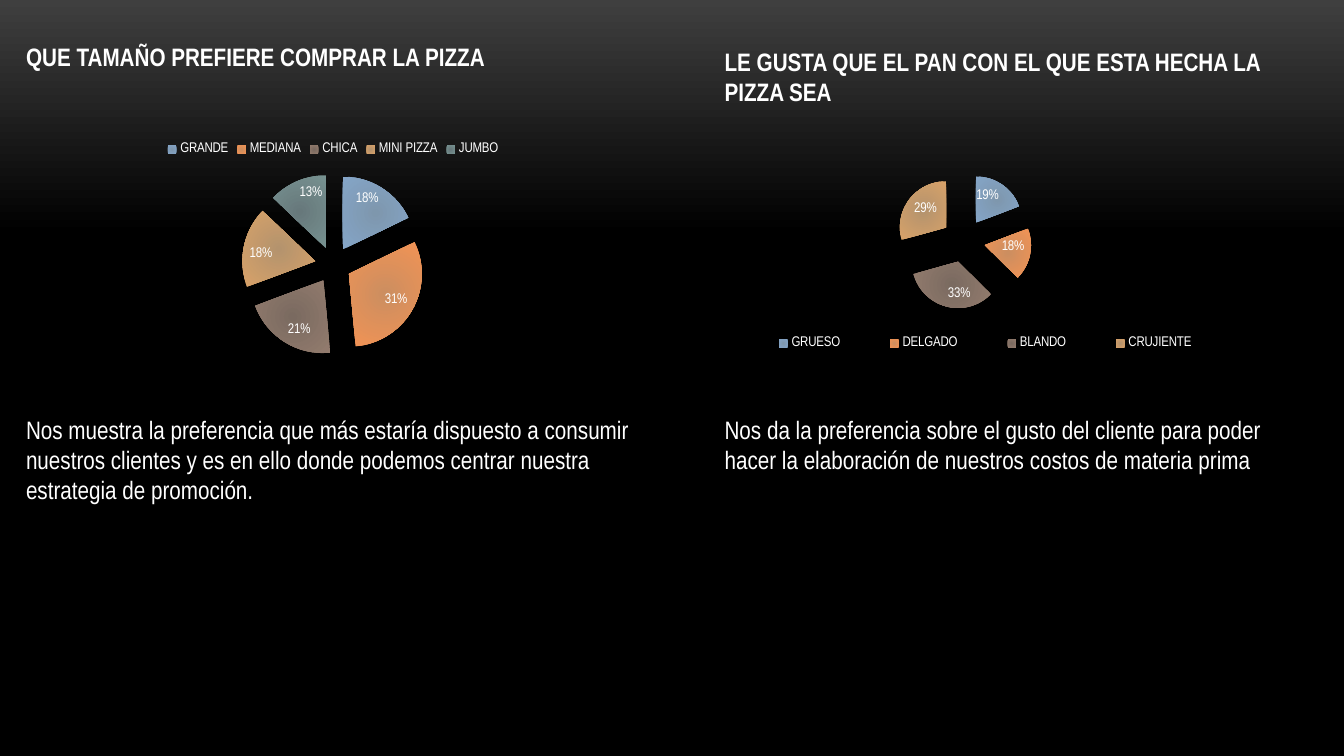
from pptx import Presentation
from pptx.chart.data import CategoryChartData
from pptx.dml.color import RGBColor
from pptx.enum.chart import XL_CHART_TYPE, XL_LABEL_POSITION, XL_LEGEND_POSITION
from pptx.enum.text import MSO_AUTO_SIZE
from pptx.oxml import parse_xml
from pptx.oxml.ns import nsdecls
from pptx.util import Pt

FONT = "Arial Narrow"
WHITE = "FFFFFF"
# Centre and rim colour of each slice
SLICES = [("7E97AD", "84A5C8"), ("CC8E60", "F29355"), ("7A6A60", "937C6E"),
          ("B4936D", "D8A269"), ("67787B", "779291")]


def color(value):
    return RGBColor.from_string(value)


def style_font(font, size, bold=False):
    for name, value in {"name": FONT, "size": Pt(size), "bold": bold}.items():
        setattr(font, name, value)
    font.color.rgb = color(WHITE)


def paint_background(slide):
    fill = slide.background.fill
    fill.gradient()
    fill.gradient_angle = 270
    for stop, (position, value) in zip(fill.gradient_stops,
                                       [(0, "3F3F3F"), (0.31, "000000")]):
        stop.position = position
        stop.color.rgb = color(value)


def add_text(slide, box, text, bold=False):
    frame = slide.shapes.add_textbox(*map(Pt, box)).text_frame
    frame.word_wrap = True
    frame.auto_size = MSO_AUTO_SIZE.SHAPE_TO_FIT_TEXT
    run = frame.paragraphs[0].add_run()
    run.text = text
    style_font(run.font, 18, bold)


def radial_fill(centre, rim):
    return parse_xml(
        f'<a:gradFill {nsdecls("a")} rotWithShape="1"><a:gsLst>'
        f'<a:gs pos="0"><a:srgbClr val="{centre}"/></a:gs>'
        f'<a:gs pos="100000"><a:srgbClr val="{rim}"/></a:gs></a:gsLst>'
        '<a:path path="circle"><a:fillToRect l="50000" t="50000" r="50000" b="50000"/>'
        '</a:path></a:gradFill>')


def manual_layout(x, y, width, height, inner=False):
    """Layout in fractions of the chart area."""
    target = '<c:layoutTarget val="inner"/>' if inner else ""
    return parse_xml(
        f'<c:layout {nsdecls("c")}><c:manualLayout>{target}'
        '<c:xMode val="edge"/><c:yMode val="edge"/>'
        f'<c:x val="{x}"/><c:y val="{y}"/><c:w val="{width}"/><c:h val="{height}"/>'
        '</c:manualLayout></c:layout>')


def replace_layout(parent, layout, after=None):
    for old in parent.xpath("c:layout"):
        parent.remove(old)
    if after is None:
        parent.insert(0, layout)
    else:
        after.addnext(layout)


def add_pie(slide, box, shares, explosion):
    data = CategoryChartData()
    data.categories = list(shares)
    data.add_series("Series 1", list(shares.values()))
    chart = slide.shapes.add_chart(XL_CHART_TYPE.PIE, *map(Pt, box), data).chart
    style_font(chart.font, 10)
    chart.has_title = False
    chart.has_legend = True
    for name, value in {"position": XL_LEGEND_POSITION.TOP,
                        "include_in_layout": False}.items():
        setattr(chart.legend, name, value)

    plot = chart.plots[0]
    plot.vary_by_categories = True
    plot.has_data_labels = True
    for name, value in {"show_percentage": True, "show_value": False,
                        "number_format": "0%", "number_format_is_linked": False,
                        "position": XL_LABEL_POSITION.INSIDE_END}.items():
        setattr(plot.data_labels, name, value)
    style_font(plot.data_labels.font, 10)

    series = plot.series[0]
    series_name = series._element.xpath("c:tx")[0]
    series_name.addnext(parse_xml(f'<c:explosion {nsdecls("c")} val="{explosion}"/>'))
    for index, (_, slice_colors) in enumerate(zip(shares, SLICES)):
        look = series.points[index].format
        look.line.fill.background()
        properties = series._element.xpath(f"c:dPt[c:idx/@val='{index}']/c:spPr")[0]
        properties.insert(0, radial_fill(*slice_colors))
    return chart


def place_pie_and_legend(chart):
    replace_layout(chart._chartSpace.xpath("c:chart/c:plotArea")[0],
                   manual_layout(0.297, 0.107, 0.355, 0.592, inner=True))
    legend = chart._chartSpace.xpath("c:chart/c:legend")[0]
    replace_layout(legend, manual_layout(0.1, 0.79, 0.82, 0.12),
                   after=legend.xpath("c:legendPos")[0])


def main():
    deck = Presentation()
    deck.slide_width, deck.slide_height = Pt(960), Pt(540)
    slide = deck.slides.add_slide(deck.slide_layouts[6])
    paint_background(slide)

    add_text(slide, (11.5, 26, 468.7, 29),
             "QUE TAMAÑO PREFIERE COMPRAR LA PIZZA", bold=True)
    add_pie(slide, (11.5, 94.3, 452.9, 169.9),
            {"GRANDE": 18, "MEDIANA": 31, "CHICA": 21, "MINI PIZZA": 18, "JUMBO": 13}, 25)
    add_text(slide, (11.5, 292.3, 468.7, 94.3),
             "Nos muestra la preferencia que más estaría dispuesto a consumir nuestros "
             "clientes y es en ello donde podemos centrar nuestra estrategia de promoción.")

    add_text(slide, (510.5, 29.5, 423.4, 51),
             "LE GUSTA QUE EL PAN CON EL QUE ESTA HECHA LA PIZZA SEA", bold=True)
    crust = add_pie(slide, (480.2, 105.8, 438.5, 164.2),
                    {"GRUESO": 19, "DELGADO": 18, "BLANDO": 33, "CRUJIENTE": 29}, 47)
    place_pie_and_legend(crust)
    add_text(slide, (510.5, 292.3, 423.4, 94.3),
             "Nos da la preferencia sobre el gusto del cliente para poder hacer la "
             "elaboración de nuestros costos de materia prima")

    deck.save("out.pptx")


if __name__ == "__main__":
    main()
